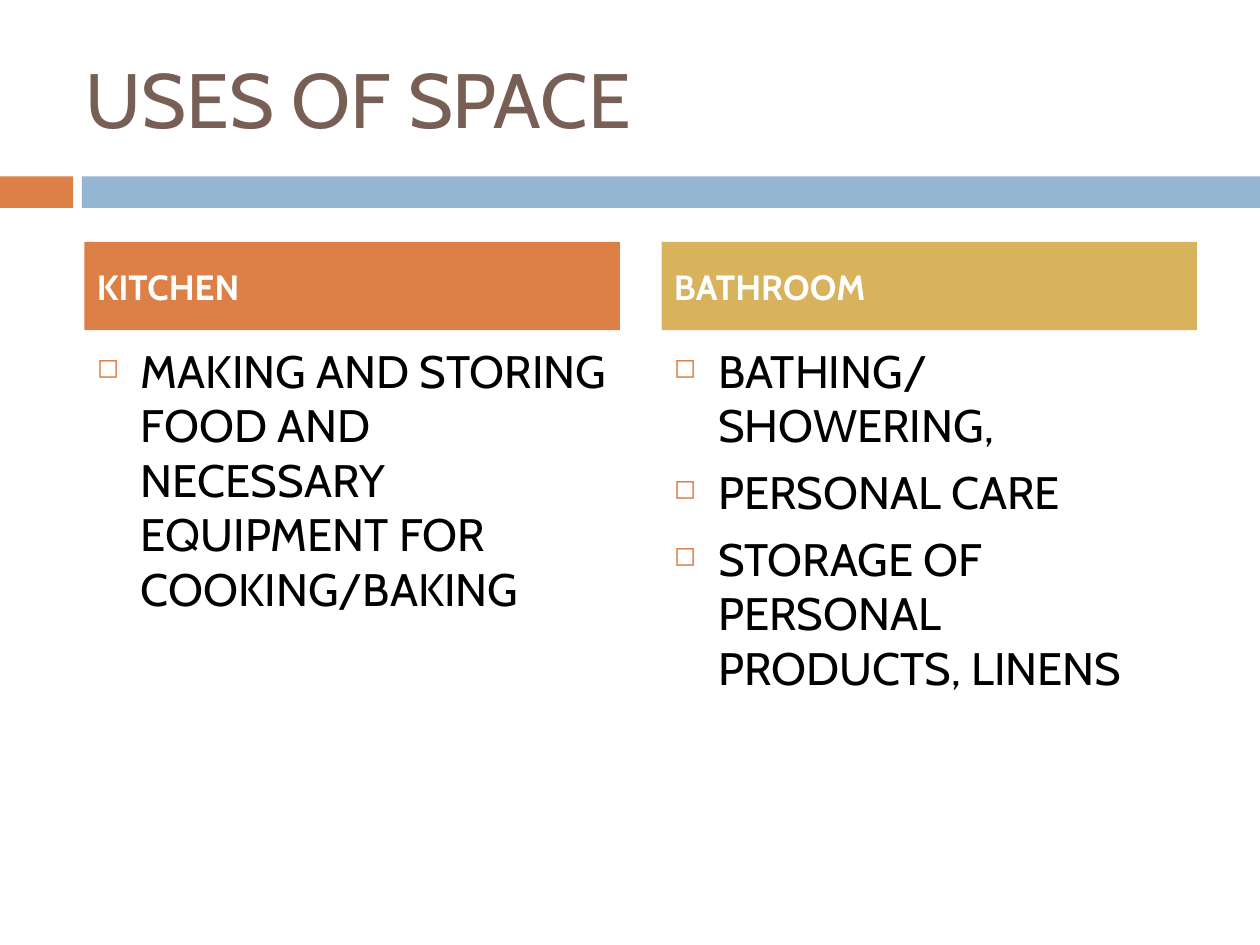
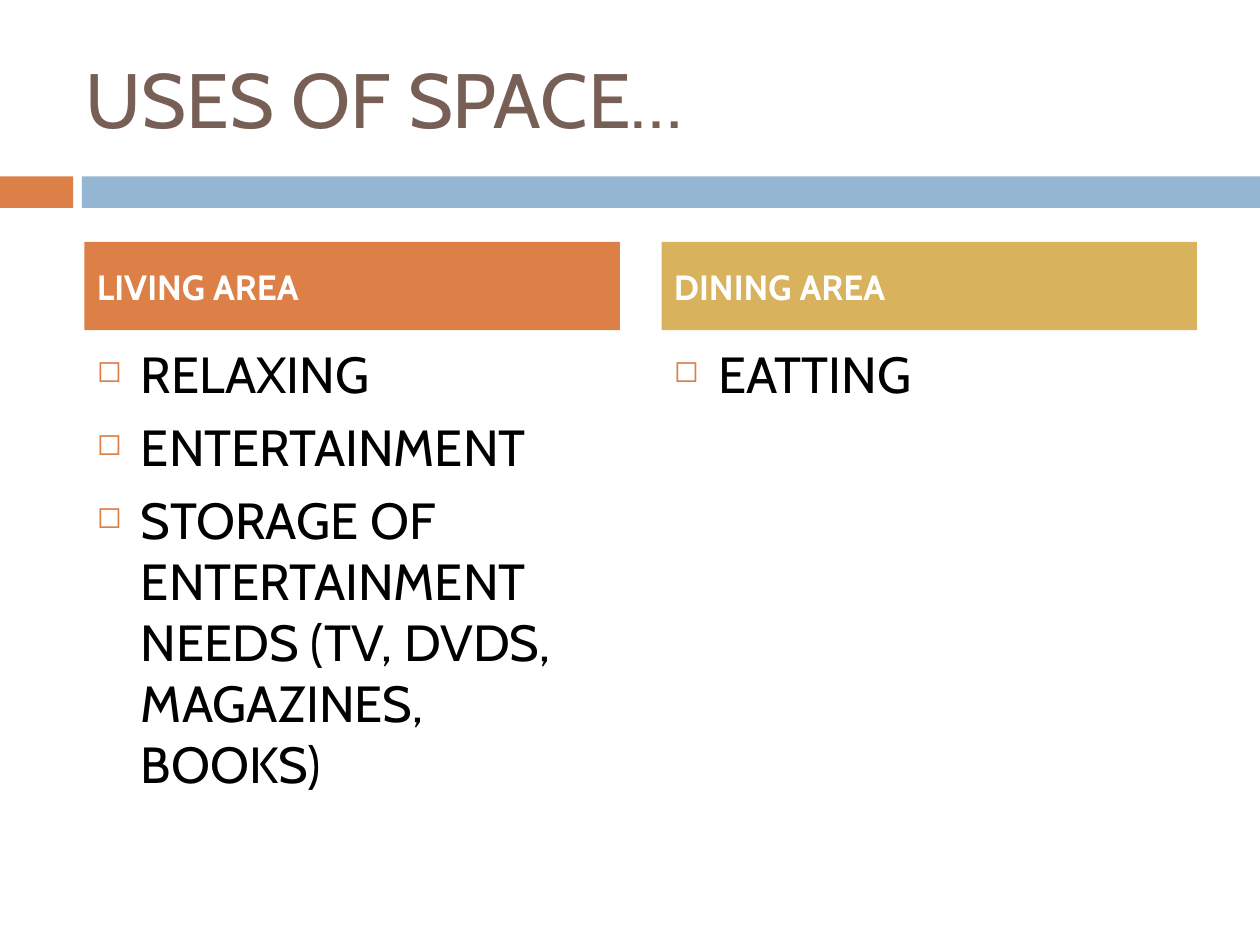
"""Build two slides on the uses of space in a home."""
from pptx import Presentation
from pptx.dml.color import RGBColor
from pptx.enum.shapes import MSO_SHAPE
from pptx.enum.text import MSO_ANCHOR, MSO_AUTO_SIZE, PP_ALIGN
from pptx.util import Inches, Pt
from lxml.etree import SubElement
from pptx.oxml.ns import qn

ORANGE = RGBColor(0xDD, 0x80, 0x47)
BLUE = RGBColor(0x94, 0xB6, 0xD2)
GOLD = RGBColor(0xD8, 0xB2, 0x5C)
BROWN = RGBColor(0x77, 0x5F, 0x55)
BLACK = RGBColor(0, 0, 0)
WHITE = RGBColor(255, 255, 255)
FONT = "Cabin"

PAGES = [
    ("USES OF SPACE", 26, [
        ("KITCHEN", ["MAKING AND STORING FOOD AND NECESSARY EQUIPMENT FOR COOKING/BAKING"]),
        ("BATHROOM", ["BATHING/SHOWERING,", "PERSONAL CARE",
                      "STORAGE OF PERSONAL PRODUCTS, LINENS"]),
    ]),
    ("USES OF SPACE…", 29, [
        ("LIVING AREA", ["RELAXING", "ENTERTAINMENT",
                         "STORAGE OF ENTERTAINMENT NEEDS (TV, DVDS, MAGAZINES, BOOKS)"]),
        ("DINING AREA", ["EATTING"]),
    ]),
]
COLUMNS = [(0.67, ORANGE), (5.25, GOLD)]
WIDTH = 4.25


def add_box(slide, left, top, width, height, fill):
    box = slide.shapes.add_shape(MSO_SHAPE.RECTANGLE, Inches(left), Inches(top),
                                 Inches(width), Inches(height))
    box.shadow.inherit = False
    box.fill.solid()
    box.fill.fore_color.rgb = fill
    box.line.fill.background()
    return box


def write(para, text, size, color, bold=False, space=7):
    para.text = text
    para.alignment = PP_ALIGN.LEFT
    para.space_before = Pt(space)
    para.font.name = FONT
    para.font.size = Pt(size)
    para.font.bold = bold
    para.font.color.rgb = color


deck = Presentation()
deck.slide_width, deck.slide_height = Inches(10), Inches(7.5)

for heading, size, rooms in PAGES:
    slide = deck.slides.add_slide(deck.slide_layouts[5])
    add_box(slide, 0, 1.4, 0.58, 0.25, ORANGE)
    add_box(slide, 0.65, 1.4, 9.35, 0.25, BLUE)

    title = slide.shapes.title
    title.left, title.top = Inches(0.58), Inches(0.3)
    title.width, title.height = Inches(8.92), Inches(0.95)
    title.text_frame.auto_size = MSO_AUTO_SIZE.NONE
    title.text_frame.vertical_anchor = MSO_ANCHOR.MIDDLE
    write(title.text_frame.paragraphs[0], heading, 44, BROWN, space=0)

    for (left, fill), (room, uses) in zip(COLUMNS, rooms):
        label = add_box(slide, left, 1.92, WIDTH, 0.7, fill).text_frame
        label.vertical_anchor = MSO_ANCHOR.MIDDLE
        write(label.paragraphs[0], room, 20, WHITE, bold=True)

        body = slide.shapes.add_textbox(Inches(left), Inches(2.67),
                                        Inches(WIDTH), Inches(3.92)).text_frame
        body.word_wrap = True
        for i, use in enumerate(uses):
            para = body.add_paragraph() if i else body.paragraphs[0]
            write(para, use, size, BLACK)
            props = para._p.get_or_add_pPr()
            props.set("marL", str(Inches(0.35)))
            props.set("indent", str(-Inches(0.35)))
            tint = SubElement(props, qn("a:buClr"))
            SubElement(tint, qn("a:srgbClr"), val=str(ORANGE))
            SubElement(props, qn("a:buSzPct"), val="60000")
            SubElement(props, qn("a:buChar"), char="◻")
            props.append(props.find(qn("a:defRPr")))

deck.save("out.pptx")
